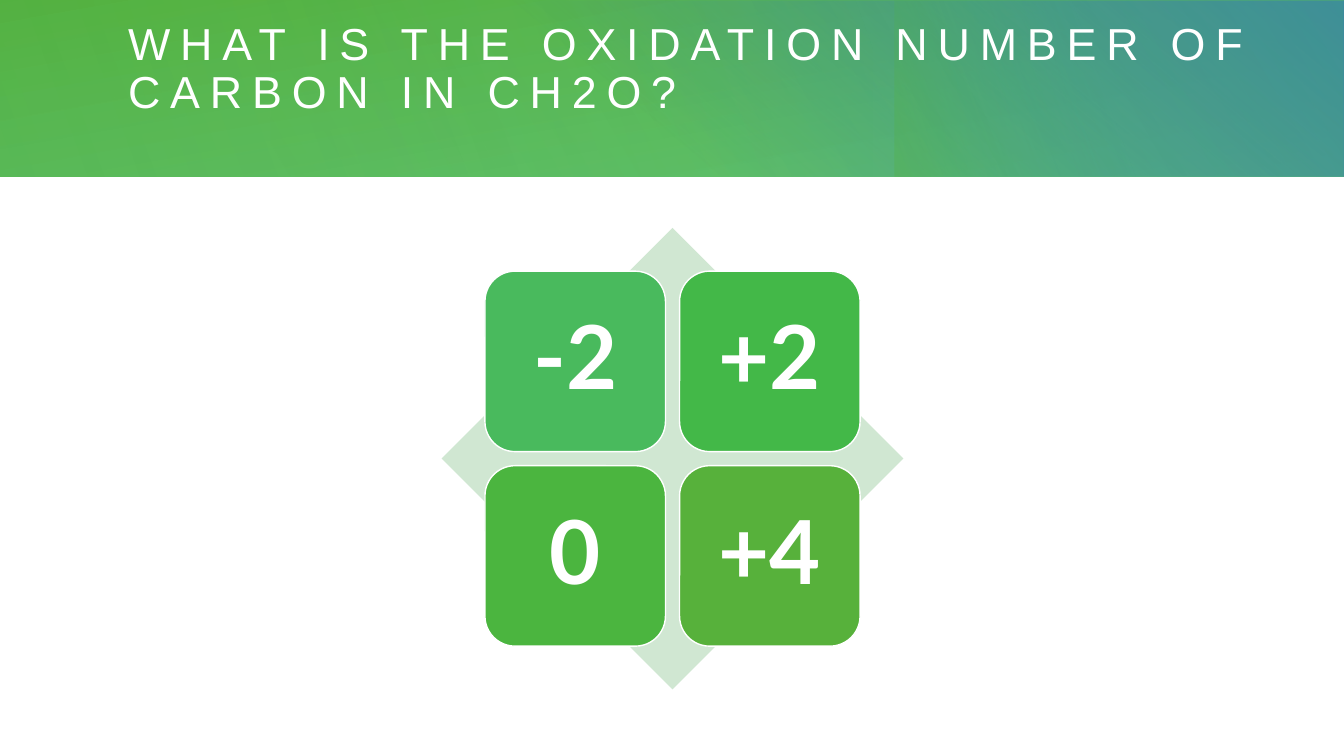
import pptx
import pptx.dml.color
import pptx.enum.shapes
import pptx.enum.text
import pptx.oxml
import pptx.oxml.ns
import pptx.util

Inches = pptx.util.Inches
Pt = pptx.util.Pt
Shape = pptx.enum.shapes.MSO_SHAPE
Align = pptx.enum.text.PP_ALIGN
Anchor = pptx.enum.text.MSO_ANCHOR


def colour(code):
    return pptx.dml.color.RGBColor.from_string(code)


class QuizSlide:
    WHITE = "FFFFFF"
    TITLE_FONT = "Arial"
    ANSWER_FONT = "Lato"

    def __init__(self, page):
        self.page = page

    def shape(self, kind, left, top, width, height, fill):
        box = self.page.shapes.add_shape(
            kind, Inches(left), Inches(top), Inches(width), Inches(height))
        box.shadow.inherit = False
        box.fill.solid()
        box.fill.fore_color.rgb = colour(fill)
        box.line.fill.background()
        return box

    def gradient(self, left, top, width, height, angle, stops, rotation=0):
        """Stops are (position %, colour, opacity %); the angle runs clockwise."""
        box = self.shape(Shape.RECTANGLE, left, top, width, height, self.WHITE)
        box.rotation = rotation
        marks = "".join(
            f'<a:gs pos="{place * 1000}"><a:srgbClr val="{code}">'
            f'<a:alpha val="{opacity * 1000}"/></a:srgbClr></a:gs>'
            for place, code, opacity in stops)
        fill = pptx.oxml.parse_xml(
            f'<a:gradFill {pptx.oxml.ns.nsdecls("a")} rotWithShape="1">'
            f'<a:gsLst>{marks}</a:gsLst>'
            f'<a:lin ang="{angle * 60000}" scaled="0"/></a:gradFill>')
        solid = box.element.spPr.find(pptx.oxml.ns.qn("a:solidFill"))
        solid.getparent().replace(solid, fill)

    def text(self, box, words, font, size, align, insets, bold=False):
        frame = box.text_frame
        frame.text = words
        frame.word_wrap = True
        frame.auto_size = pptx.enum.text.MSO_AUTO_SIZE.NONE
        frame.vertical_anchor = Anchor.MIDDLE
        (frame.margin_left, frame.margin_top,
         frame.margin_right, frame.margin_bottom) = map(Inches, insets)
        para = frame.paragraphs[0]
        para.alignment = align
        para.line_spacing = 0.9
        span = para.runs[0]
        span.font.name = font
        span.font.size = Pt(size)
        span.font.bold = bold
        span.font.color.rgb = colour(self.WHITE)

    def title(self, words, left, top, width, height, spacing):
        box = self.page.shapes.title
        box.left, box.top = Inches(left), Inches(top)
        box.width, box.height = Inches(width), Inches(height)
        # The bottom inset lifts the two lines towards the top edge
        self.text(box, words, self.TITLE_FONT, 32, Align.LEFT, (0, 0, 0, 0.49))
        for properties in box.element.iter(pptx.oxml.ns.qn("a:rPr")):
            properties.set("spc", str(spacing * 100))
        # Bring the title in front of the banner
        box.element.getparent().append(box.element)

    def answer(self, words, left, top, size, fill):
        tile = self.shape(Shape.ROUNDED_RECTANGLE, left, top, size, size, fill)
        tile.line.color.rgb = colour(self.WHITE)
        tile.line.width = Pt(1)
        self.text(tile, words, self.ANSWER_FONT, 63, Align.CENTER,
                  (0.26,) * 4, bold=True)


def main():
    deck = pptx.Presentation()
    deck.slide_width, deck.slide_height = Inches(13.33), Inches(7.5)
    slide = QuizSlide(deck.slides.add_slide(deck.slide_layouts[5]))

    # Backdrop and layered banner
    green, leaf, teal, blue = "49BA5D", "57B13B", "3BB182", "3B7EB1"
    slide.shape(Shape.RECTANGLE, 0, 0, 13.33, 7.5, slide.WHITE)
    slide.gradient(0, 0, 13.33, 1.75, 260, [(0, green, 83), (100, leaf, 100)])
    slide.gradient(4.81, 0.01, 8.52, 1.74, 310, [(22, blue, 0), (99, blue, 100)])
    slide.gradient(9.87, -0.99, 1.75, 3.74, 250, [(45, teal, 0), (99, leaf, 33)], 270)
    slide.gradient(2.68, 0, 10.64, 1.75, 330, [(0, green, 30), (99, green, 0)], 180)
    slide.gradient(0, 0, 8.65, 1.75, 340, [(0, green, 21), (99, green, 0)])

    # Question
    slide.title("WHAT IS THE OXIDATION NUMBER OF CARBON IN CH2O?",
                1.27, 0.41, 11.35, 1.06, spacing=7)

    # Answer matrix on a diamond
    slide.shape(Shape.DIAMOND, 4.38, 2.26, 4.58, 4.58, "D0E7D2")
    answers = [("-2", green), ("+2", "43B848"), ("0", "4BB53F"), ("+4", leaf)]
    pitch = 1.93
    for index, (words, fill) in enumerate(answers):
        row, column = divmod(index, 2)
        slide.answer(words, 4.81 + column * pitch, 2.69 + row * pitch, 1.79, fill)

    deck.save("out.pptx")


if __name__ == "__main__":
    main()
